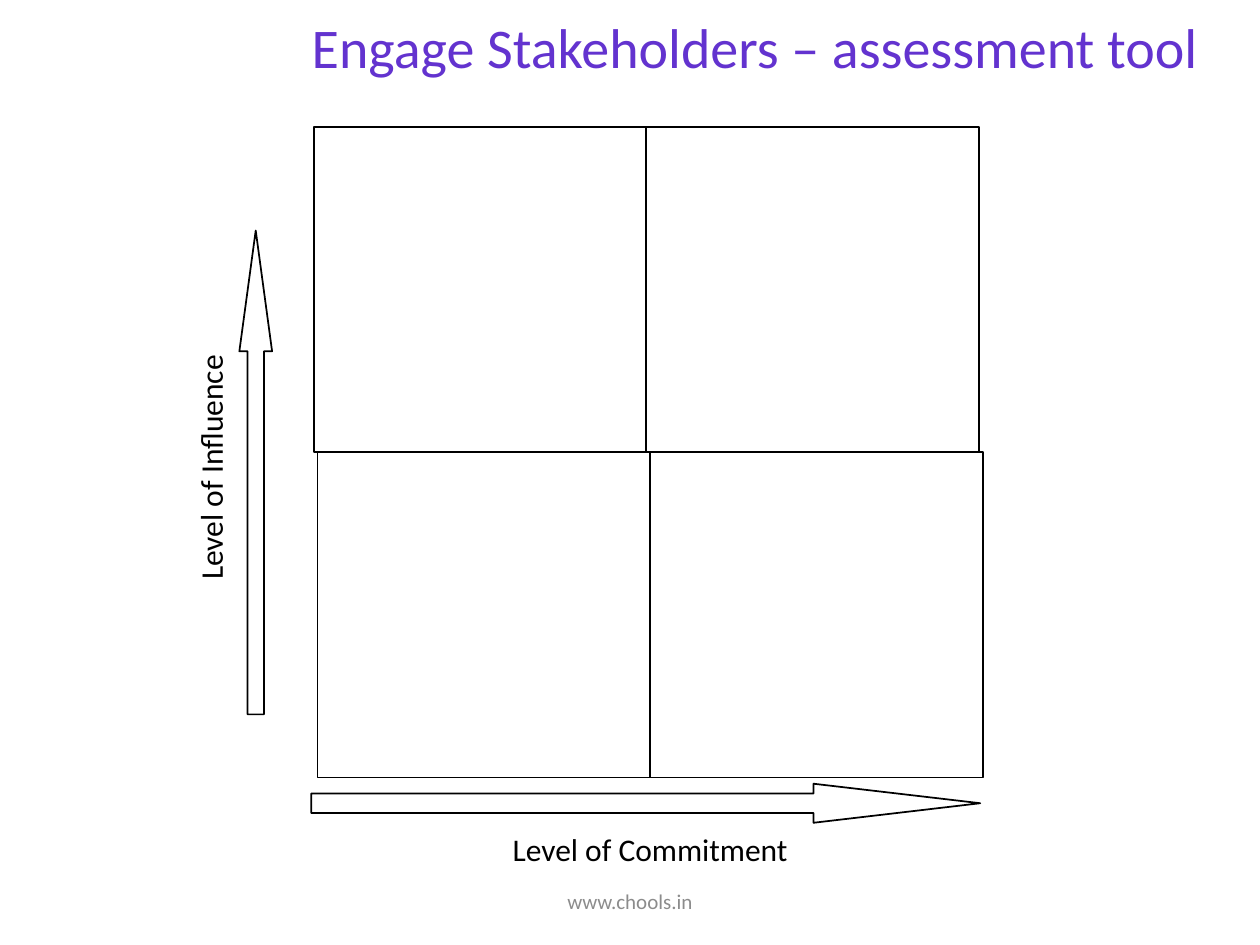
from pptx import Presentation, util as u
from pptx.dml.color import RGBColor
from pptx.enum import shapes, text


def colour(value):
    return RGBColor.from_string(value)


class Painter:
    """Holds the style and the current slide."""
    font = "Calibri"
    ink = "000000"
    line_width = u.Pt(1)

    def __init__(self, page):
        self.page = page

    def outline(self, kind, left, top, width, height, adjustments=()):
        shape = self.page.shapes.add_shape(
            kind, *map(u.Inches, (left, top, width, height)))
        shape.shadow.inherit = False
        shape.fill.background()
        shape.line.color.rgb = colour(self.ink)
        shape.line.width = self.line_width
        for index, value in enumerate(adjustments):
            shape.adjustments[index] = value

    def label(self, words, left, top, width, height, size=18, ink=None,
              rotation=0, frame_format=None, para_format=None):
        box = self.page.shapes.add_textbox(
            *map(u.Inches, (left, top, width, height)))
        box.rotation = rotation
        frame = box.text_frame
        para = frame.paragraphs[0]
        span = para.add_run()
        span.text = words
        span.font.color.rgb = colour(ink or self.ink)
        formats = (
            (frame, {"word_wrap": True, **(frame_format or {})}),
            (para, para_format or {}),
            (span.font, {"name": self.font, "size": u.Pt(size)}),
        )
        for target, values in formats:
            for name, value in values.items():
                setattr(target, name, value)


def main():
    deck = Presentation()
    deck.slide_width, deck.slide_height = u.Inches(10), u.Inches(7.5)
    painter = Painter(deck.slides.add_slide(deck.slide_layouts[6]))
    kinds, align = shapes.MSO_SHAPE, text.PP_ALIGN
    grow = text.MSO_AUTO_SIZE.SHAPE_TO_FIT_TEXT

    # Title
    painter.label("Engage Stakeholders – assessment tool", 0.75, 0.11, 8.86, 1,
                  size=32, ink="6333CF",
                  para_format={"alignment": align.RIGHT, "line_spacing": 0.9})

    # Quadrants: the lower row sits slightly to the right
    cell_width, cell_height = 2.64, 2.58
    for row, row_left in enumerate((2.49, 2.52)):
        for column in range(2):
            painter.outline(kinds.RECTANGLE, row_left + column * cell_width,
                            1.01 + row * cell_height, cell_width, cell_height)

    # Axis arrows
    painter.outline(kinds.UP_ARROW, 1.9, 1.83, 0.26, 3.84, (0.5, 3.69))
    painter.outline(kinds.RIGHT_ARROW, 2.47, 6.22, 5.31, 0.31, (0.5, 4.27))

    # Axis labels
    painter.label("Level of Commitment", 3.97, 6.54, 2.56, 0.4,
                  frame_format={"word_wrap": False, "auto_size": grow})
    painter.label("Level of Influence", 0.54, 3.37, 2.26, 0.4, rotation=270,
                  frame_format={"auto_size": grow})

    # Footer
    painter.label("www.chools.in", 3.31, 6.95, 3.38, 0.4, size=12, ink="8C8C8C",
                  frame_format={"vertical_anchor": text.MSO_ANCHOR.MIDDLE},
                  para_format={"alignment": align.CENTER})

    deck.save("out.pptx")


if __name__ == "__main__":
    main()
